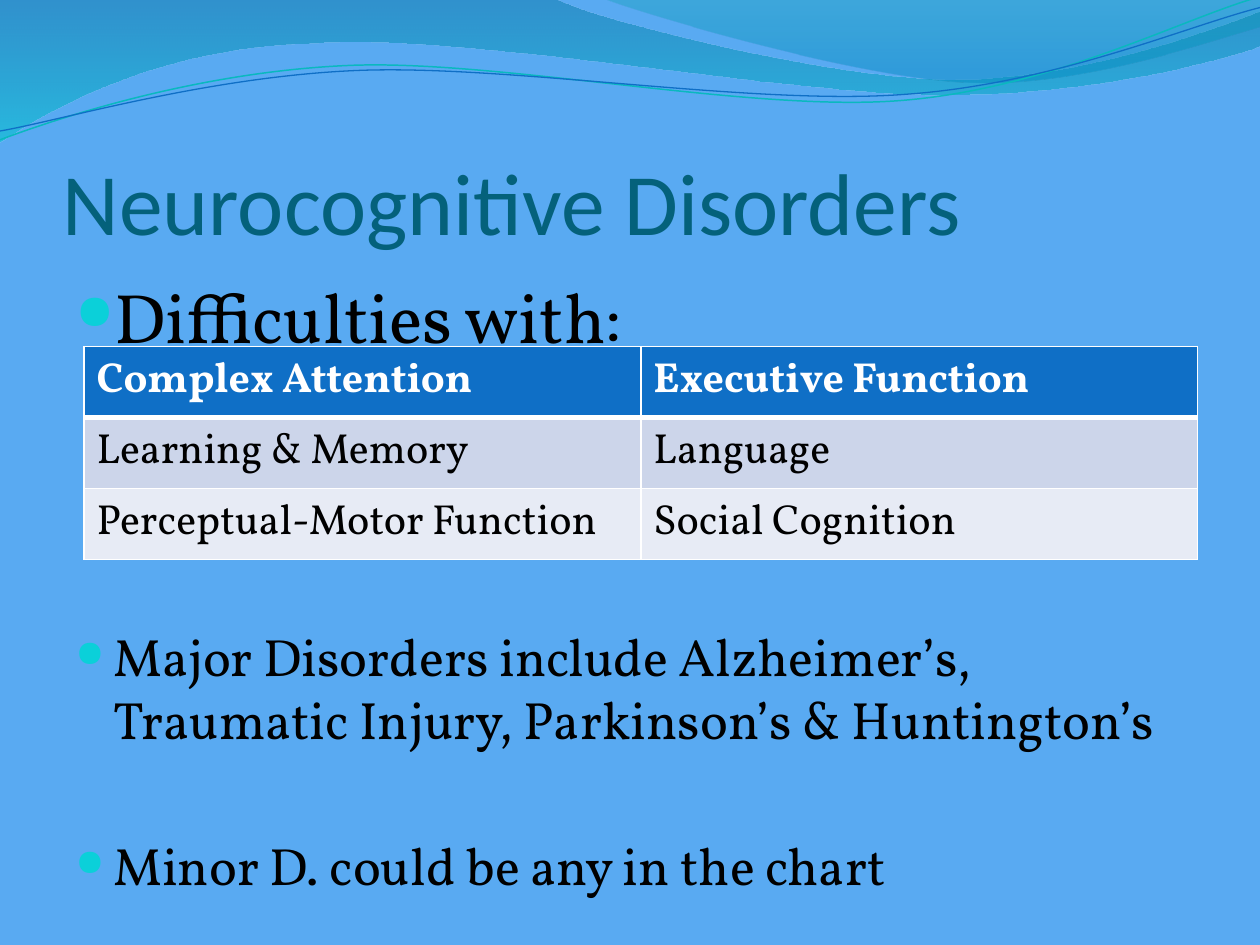
from lxml.etree import SubElement as Sub
from pptx import Presentation
from pptx.dml.color import RGBColor
from pptx.enum.text import MSO_ANCHOR as Anchor
from pptx.oxml.ns import qn
from pptx.util import Inches, Pt

CELL = Inches(0.1)  # the slide is a grid of 100 columns by 75 rows
COLS, ROWS = 100, 75
HEX = {
    "back": "59AAF2", "title": "04617B", "text": "000000", "white": "FFFFFF",
    "bullet": "0BD0D9", "head": "0F6FC6", "odd": "CCD5EA", "even": "E7EBF5",
    "teal": "0AB8BF", "blue": "0F6FC6", "deep": "0074A1", "aqua": "00C6CF",
    "sea": "00A1A9", "sky": "008BBF",
}
BODY = "Vollkorn"

# Each wave is a start point, then lines (one point) and curves (three points).
BANDS = [
    ([[(0, 0)], [(44, -0.1)],
      [(47.6, 1.7), (66.4, 6.3), (75.8, 6.3)],
      [(85.3, 6.3), (95.8, 2.6), (100, 0.9)],
      [(100.1, 3.6)],
      [(98.3, 4.4), (87, 7.6), (74.6, 7.5)],
      [(62.2, 7.5), (38.2, 2.8), (25.7, 3.4)],
      [(12.9, 3.6), (4.6, 8.3), (-0.1, 11.3)]],
     [("deep", 0, 45), ("aqua", 1, 55)]),
    ([[(47.9, -0.1)],
      [(50.9, 1.1), (68.2, 6.2), (76.9, 6.5)],
      [(85.6, 6.9), (96.1, 3.2), (100, 2.1)],
      [(100, 0)]],
     [("sea", 0, 30), ("sky", 0.8, 45)]),
]
LINES = [
    ([[(0, 11.1)],
      [(4.8, 9.3), (15.8, 5.7), (27.7, 5.2)],
      [(39.5, 4.7), (59.3, 8.9), (71.3, 8)],
      [(83.3, 7.1), (93.8, 1.5), (99.8, -0.2)]], "teal", 0.85),
    ([[(0, 10.4)],
      [(4.7, 9.6), (16.4, 6.1), (28.3, 5.6)],
      [(40.3, 5.1), (59.7, 8.4), (71.7, 7.5)],
      [(83.6, 6.7), (94.1, 2.1), (100, 0.6)]], "blue", 0.75),
]
POINTS = [  # text, size, space before
    ("Difficulties with:", 40, 7.5),
    ("Major Disorders include Alzheimer’s, Traumatic Injury, "
     "Parkinson’s & Huntington’s", 30, 152.5),
    ("Minor D. could be any in the chart", 30, 47.3),
]
SKILLS = [
    ("Complex Attention", "Executive Function"),
    ("Learning & Memory", "Language"),
    ("Perceptual-Motor Function", "Social Cognition"),
]


def rgb(name):
    return RGBColor.from_string(HEX[name])


def grid(*cells):
    return [round(c * CELL) for c in cells]


def write(para, text, size, font=BODY, color="text", bold=False):
    run = para.add_run()
    run.text = text
    run.font.size, run.font.name, run.font.bold = Pt(size), font, bold
    run.font.color.rgb = rgb(color)


def bend(shape, wave):
    """Join each three straight steps of a curve into one Bezier step."""
    steps = list(shape._element.iter(qn("a:lnTo")))
    for part in wave[1:]:
        first, *rest = steps[:len(part)]
        steps = steps[len(part):]
        if rest:
            first.tag = qn("a:cubicBezTo")
        for step in rest:
            first.append(step[0])
            step.getparent().remove(step)


def draw(slide, box, wave, close):
    left, top = box
    dots = [grid(left + x, top + y) for part in wave for x, y in part]
    build = slide.shapes.build_freeform(*dots[0], scale=1.0)
    build.add_line_segments(dots[1:], close=close)
    shape = build.convert_to_shape()
    shape.shadow.inherit = False
    bend(shape, wave)
    return shape


def waves(slide, box):
    for wave, stops in BANDS:
        band = draw(slide, box, wave, True)
        band.line.fill.background()
        band.fill.gradient()
        band.fill.gradient_angle = 270
        for stop, (name, spot, _) in zip(band.fill.gradient_stops, stops):
            stop.position = spot
            stop.color.rgb = rgb(name)
        tags = band.fill._xPr.iter(qn("a:srgbClr"))
        for tag, (_, _, alpha) in zip(tags, stops):
            Sub(tag, qn("a:alpha"), val=str(alpha * 1000))
    for wave, name, width in LINES:
        curve = draw(slide, box, wave, False)
        curve.fill.background()
        curve.line.color.rgb = rgb(name)
        curve.line.width = Pt(width)


def frame(slide, box):
    text = slide.shapes.add_textbox(*grid(*box)).text_frame
    text.word_wrap = True
    return text


def title(slide, box):
    text = frame(slide, box)
    text.margin_left = text.margin_right = text.margin_bottom = 0
    text.vertical_anchor = Anchor.BOTTOM
    write(text.paragraphs[0], "Neurocognitive Disorders", 50, "Calibri", "title")


def bullet(para):
    prop = para._p.get_or_add_pPr()
    prop.set("marL", str(Inches(0.3)))
    prop.set("indent", str(-Inches(0.3)))
    Sub(Sub(prop, qn("a:buClr")), qn("a:srgbClr"), val=HEX["bullet"])
    Sub(prop, qn("a:buSzPct"), val="70000")
    Sub(prop, qn("a:buChar"), char="●")


def points(slide, box):
    text = frame(slide, box)
    for i, (words, size, gap) in enumerate(POINTS):
        para = text.add_paragraph() if i else text.paragraphs[0]
        para.space_before = Pt(gap)
        bullet(para)
        write(para, words, size)


def edge(cell, side, width):
    prop = cell._tc.get_or_add_tcPr()
    line = Sub(prop, qn("a:ln" + side), w=str(Pt(width)))
    Sub(Sub(line, qn("a:solidFill")), qn("a:srgbClr"), val=HEX["white"])


def skills(slide, box):
    table = slide.shapes.add_table(len(SKILLS), len(SKILLS[0]), *grid(*box)).table
    table.first_row = table.horz_banding = False
    for r, words in enumerate(SKILLS):
        for c, word in enumerate(words):
            cell = table.cell(r, c)
            for side in "LRTB":
                heavy = (r, side) in ((0, "B"), (1, "T"))
                edge(cell, side, 3 if heavy else 1)
            cell.fill.solid()
            cell.fill.fore_color.rgb = rgb(("head", "odd", "even")[r])
            write(cell.text_frame.paragraphs[0], word, 24,
                  color="text" if r else "white", bold=not r)


def main():
    deck = Presentation()
    deck.slide_width, deck.slide_height = grid(COLS, ROWS)
    slide = deck.slides.add_slide(deck.slide_layouts[6])
    slide.background.fill.solid()
    slide.background.fill.fore_color.rgb = rgb("back")
    waves(slide, (0, 0))
    title(slide, (5, 7.6, 90, 12.5))
    points(slide, (5, 21.2, 90, 48))
    skills(slide, (6.66, 27.5, 88.4, 16.9))
    deck.save("out.pptx")


if __name__ == "__main__":
    main()
